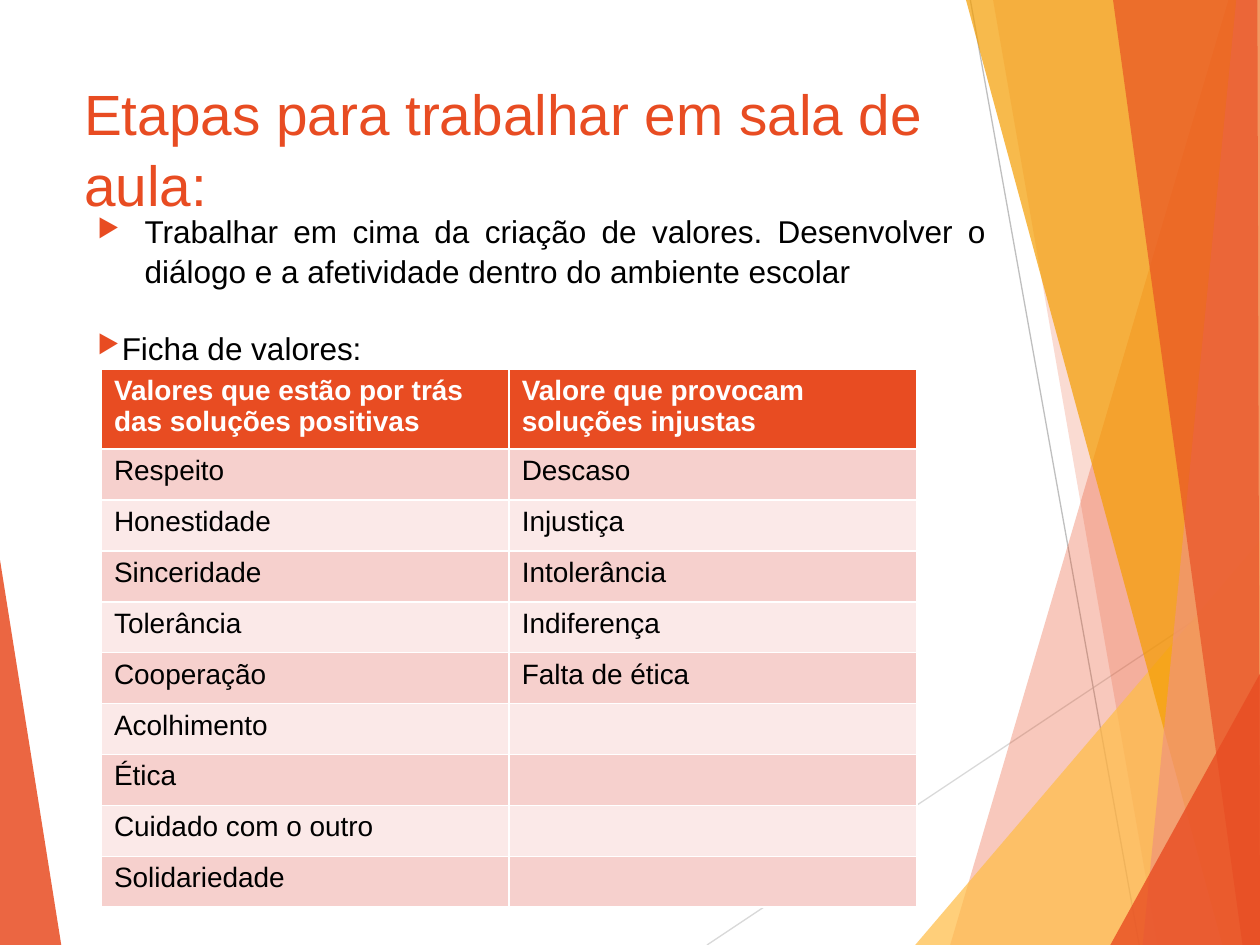
from lxml import etree
from pptx import Presentation
from pptx import util as u
from pptx.dml.color import RGBColor
from pptx.enum import shapes, text
from pptx.oxml import ns

ORANGE = RGBColor(0xE8, 0x4C, 0x22)
SALMON = RGBColor(0xF1, 0x94, 0x7A)
AMBER = RGBColor(0xF4, 0x9D, 0x00)
YELLOW = RGBColor(0xFF, 0xBD, 0x47)
PALE_GRAY = RGBColor(0xD9, 0xD9, 0xD9)
GRAY = RGBColor(0xBF, 0xBF, 0xBF)
ROSE = RGBColor(0xF6, 0xD0, 0xCD)
LIGHT_ROSE = RGBColor(0xFB, 0xE9, 0xE8)
WHITE = RGBColor(0xFF, 0xFF, 0xFF)
BLACK = RGBColor(0, 0, 0)
WIDTH, HEIGHT = 720, 540

HEADERS = ("Valores que estão por trás das soluções positivas",
           "Valore que provocam soluções injustas")
VALUES = [
    ("Respeito", "Descaso"),
    ("Honestidade", "Injustiça"),
    ("Sinceridade", "Intolerância"),
    ("Tolerância", "Indiferença"),
    ("Cooperação", "Falta de ética"),
    ("Acolhimento", ""),
    ("Ética", ""),
    ("Cuidado com o outro", ""),
    ("Solidariedade", ""),
]


def right_band(top, bottom):
    return [(top, 0), (bottom, HEIGHT), (WIDTH, HEIGHT), (WIDTH, 0)]


def right_corner(left, top):
    return [(left, HEIGHT), (WIDTH, top), (WIDTH, HEIGHT)]


class SlideBuilder:
    font = "Arial"
    line_spacing = 1.04

    def __init__(self, slide):
        self.slide = slide
        self.shapes = slide.shapes

    def facet(self, points, color, opacity):
        start, *rest = [(u.Pt(x), u.Pt(y)) for x, y in points]
        outline = self.shapes.build_freeform(*start)
        outline.add_line_segments(rest, close=True)
        facet = outline.convert_to_shape()
        facet.shadow.inherit = False
        facet.line.fill.background()
        facet.fill.solid()
        facet.fill.fore_color.rgb = color
        tint = facet._element.spPr.find(".//" + ns.qn("a:srgbClr"))
        etree.SubElement(tint, ns.qn("a:alpha"), val=str(opacity * 1000))

    def line(self, x1, y1, x2, y2, color):
        line = self.shapes.add_connector(
            shapes.MSO_CONNECTOR.STRAIGHT, u.Pt(x1), u.Pt(y1), u.Pt(x2), u.Pt(y2))
        line.line.color.rgb = color
        line.line.width = u.Pt(0.75)
        etree.SubElement(line._element.spPr, ns.qn("a:effectLst"))

    def style(self, paragraph, size, color, bold=False):
        for run in paragraph.runs:
            run.font.name = self.font
            run.font.size = u.Pt(size)
            run.font.bold = bold
            run.font.color.rgb = color

    def text_box(self, left, top, width, height, content, size, color):
        frame = self.shapes.add_textbox(
            u.Pt(left), u.Pt(top), u.Pt(width), u.Pt(height)).text_frame
        frame.word_wrap = True
        frame.text = content
        for paragraph in frame.paragraphs:
            paragraph.line_spacing = self.line_spacing
            self.style(paragraph, size, color)
        return frame

    def bullet(self, paragraph, indent):
        paragraph.alignment = text.PP_ALIGN.JUSTIFY
        props = paragraph._p.get_or_add_pPr()
        props.set("marL", str(u.Pt(indent)))
        props.set("indent", str(-u.Pt(indent)))
        color = etree.SubElement(props, ns.qn("a:buClr"))
        etree.SubElement(color, ns.qn("a:srgbClr"), val=str(ORANGE))
        etree.SubElement(props, ns.qn("a:buSzPct"), val="80000")
        etree.SubElement(props, ns.qn("a:buChar"), char="▶")

    def table(self, left, top, column_width, header_height, row_height, rows):
        height = header_height + row_height * (len(rows) - 1)
        table = self.shapes.add_table(
            len(rows), len(rows[0]), u.Pt(left), u.Pt(top),
            u.Pt(column_width * len(rows[0])), u.Pt(height)).table
        table.horz_banding = False
        for r, row in enumerate(rows):
            header = r == 0
            table.rows[r].height = u.Pt(header_height if header else row_height)
            fill = ORANGE if header else (LIGHT_ROSE, ROSE)[r % 2]
            for c, value in enumerate(row):
                cell = table.cell(r, c)
                cell.fill.solid()
                cell.fill.fore_color.rgb = fill
                cell.text_frame.text = value
                self.style(cell.text_frame.paragraphs[0], 16,
                           WHITE if header else BLACK, bold=header)


def main():
    deck = Presentation()
    deck.slide_width, deck.slide_height = u.Pt(WIDTH), u.Pt(HEIGHT)
    page = SlideBuilder(deck.slides.add_slide(deck.slide_layouts[6]))

    page.facet([(0, 320), (35, HEIGHT), (0, HEIGHT)], ORANGE, 85)
    page.line(404, HEIGHT, WIDTH, 329.5, PALE_GRAY)
    page.line(554.5, 0, 651, HEIGHT, GRAY)
    for points, color, opacity in [
        (right_band(702, 543), ORANGE, 30),
        (right_band(567.5, 661.5), ORANGE, 20),
        (right_corner(523, 309), YELLOW, 72),
        (right_band(552, 698.5), AMBER, 70),
        (right_band(706.5, 653), SALMON, 70),
        (right_band(636, 710)[:3] + [(718.5, 0)], ORANGE, 65),
        (right_corner(634.5, 385), ORANGE, 80),
    ]:
        page.facet(points, color, opacity)

    title = page.text_box(41, 37, 500, 69,
                          "Etapas para trabalhar em sala de aula:", 32.4, ORANGE)
    title.margin_top = u.Pt(6.5)

    steps = page.text_box(
        48.5, 117, 522, 408,
        "Trabalhar em cima da criação de valores. Desenvolver o diálogo "
        "e a afetividade dentro do ambiente escolar\nFicha de valores:", 18, BLACK)
    activity, worksheet = steps.paragraphs
    worksheet.space_before = u.Pt(21.5)
    page.bullet(activity, 27)
    page.bullet(worksheet, 14)

    page.table(58, 211, 233, 44, 29.1, [HEADERS] + VALUES)
    deck.save("out.pptx")


if __name__ == "__main__":
    main()
